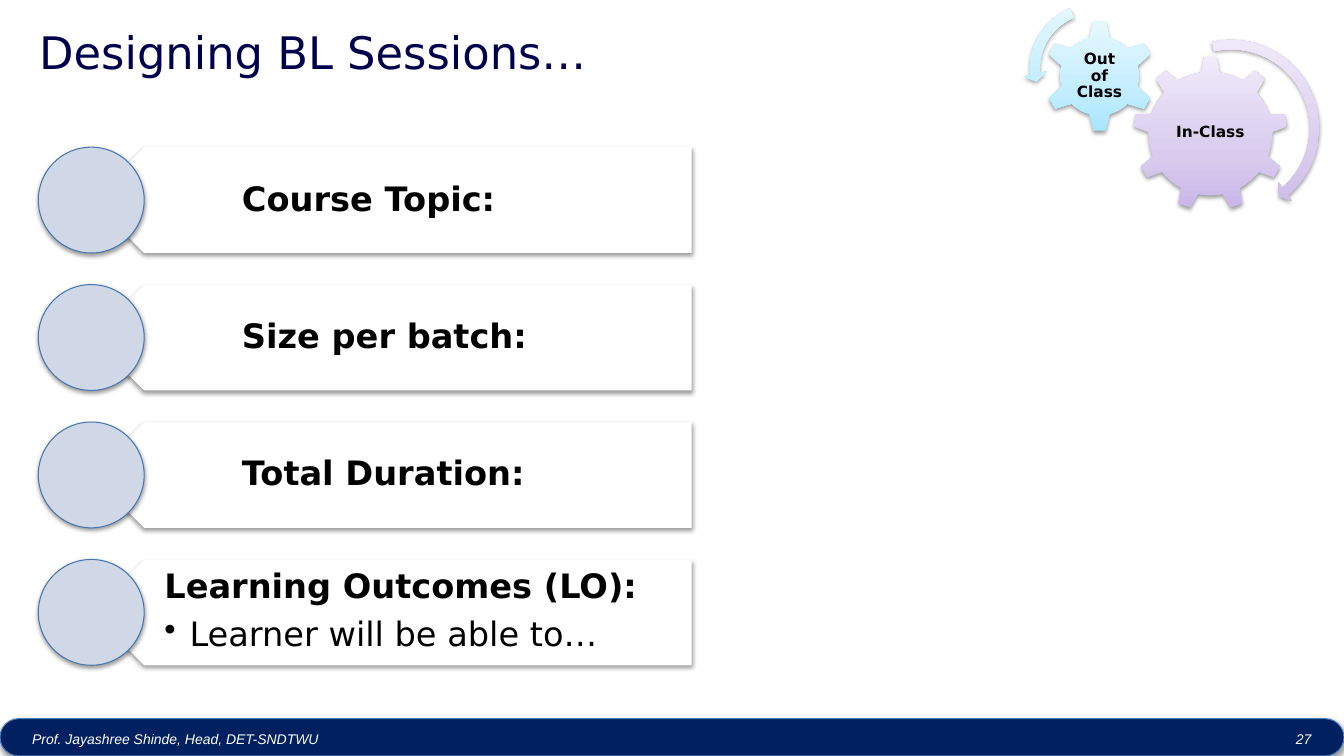
from copy import deepcopy
from dataclasses import dataclass

from lxml import etree
from pptx import Presentation
from pptx.dml.color import RGBColor
from pptx.enum.shapes import MSO_SHAPE
from pptx.enum.text import MSO_ANCHOR, PP_ALIGN
from pptx.oxml.ns import qn
from pptx.util import Inches, Pt

PLATE, DISC, BAR = MSO_SHAPE.PENTAGON, MSO_SHAPE.OVAL, MSO_SHAPE.ROUNDED_RECTANGLE
GEAR6, GEAR9 = MSO_SHAPE.GEAR_6, MSO_SHAPE.GEAR_9
ARC, LEFT_ARC = MSO_SHAPE.CIRCULAR_ARROW, MSO_SHAPE.LEFT_CIRCULAR_ARROW
TOP, MID = MSO_ANCHOR.TOP, MSO_ANCHOR.MIDDLE
LEFT, CENTER = PP_ALIGN.LEFT, PP_ALIGN.CENTER


@dataclass(frozen=True)
class Theme:
    """Colours, fonts and type sizes."""
    font: str = "DejaVu Sans"
    foot_font: str = "Arial"
    ink: str = "000000"
    white: str = "FFFFFF"
    title: str = "00004C"
    navy: str = "002060"
    bar_line: str = "4B7EBC"
    disc: str = "D0D8E8"
    disc_line: str = "4875AC"
    lilac: tuple = ("C9B5E8", "D8CBEE", "F0EAF9")
    sky: tuple = ("A7E6FF", "C1EDFF", "E7F8FF")
    title_size: int = 32
    row_size: int = 24
    gear_size: int = 11
    foot_size: int = 10


T = Theme()


def rgb(tone):
    """Turn a hex string into a colour."""
    return RGBColor.from_string(tone)


def blend(shape, tones):
    """Fill a shape with three tones rising from its foot."""
    shape.fill.gradient()
    shape.fill.gradient_angle = 90
    stops = shape._element.spPr.find(".//" + qn("a:gsLst"))
    stops.insert(1, deepcopy(stops[0]))
    for stop, spot, tone in zip(shape.fill.gradient_stops, (0, 0.35, 1), tones):
        stop.position = spot
        stop.color.rgb = rgb(tone)


def shade(shape):
    """Give a shape a soft shadow below it."""
    shape.shadow.inherit = False
    effects = shape._element.spPr.find(qn("a:effectLst"))
    drop = etree.SubElement(effects, qn("a:outerShdw"), blurRad="40000",
                            dist="20000", dir="5400000", rotWithShape="0")
    tone = etree.SubElement(drop, qn("a:srgbClr"), val=T.ink)
    etree.SubElement(tone, qn("a:alpha"), val="38000")


def add_form(slide, kind, box, fill, line=None, adjust=()):
    """Add a shaded shape with a plain or blended fill."""
    shape = slide.shapes.add_shape(kind, *map(Inches, box))
    for i, value in enumerate(adjust):
        shape.adjustments[i] = value
    if isinstance(fill, tuple):
        blend(shape, fill)
    else:
        shape.fill.solid()
        shape.fill.fore_color.rgb = rgb(fill)
    if line:
        shape.line.color.rgb = rgb(line)
        shape.line.width = Pt(0.75)
    else:
        shape.line.fill.background()
    shade(shape)
    return shape


def add_frame(slide, box, inset=(0.1, 0.05, 0.1, 0.05), anchor=TOP):
    """Add a wrapping text box and return its frame."""
    frame = slide.shapes.add_textbox(*map(Inches, box)).text_frame
    frame.word_wrap = True
    frame.vertical_anchor = anchor
    (frame.margin_left, frame.margin_top,
     frame.margin_right, frame.margin_bottom) = map(Inches, inset)
    return frame


def write(para, text, size, tone=T.ink, font=T.font, bold=False, italic=False,
          align=LEFT):
    """Write one styled run into a paragraph."""
    para.alignment = align
    run = para.add_run()
    run.text = text
    run.font.name, run.font.size = font, Pt(size)
    run.font.bold, run.font.italic = bold, italic
    run.font.color.rgb = rgb(tone)


def space(para, after):
    """Set tight lines and the gap after a paragraph."""
    para.line_spacing = 0.9
    para.space_after = Pt(after)


def indent(para, left, first=0, mark=None):
    """Indent a paragraph, with a bullet if a mark is given."""
    props = para._p.get_or_add_pPr()
    props.set("marL", str(Inches(left)))
    props.set("indent", str(Inches(first)))
    if mark:
        etree.SubElement(props, qn("a:buChar"), char=mark)


def draw_row(slide, box, head, point=None):
    """Draw a disc and plate with a heading and perhaps a bullet."""
    x, y, w, h = box
    plate = add_form(slide, PLATE, (x + h / 2, y, w - h / 2, h), T.white)
    plate.rotation = 180
    frame = add_frame(slide, (x + 0.79, y, w - 0.79, h), (0.46, 0.1, 0.19, 0.1),
                      TOP if point else MID)
    para = frame.paragraphs[0]
    if not point:
        indent(para, 0.77)
    write(para, head, T.row_size, bold=True)
    space(para, 0.35 * T.row_size)
    if point:
        para = frame.add_paragraph()
        para.level = 1
        indent(para, 0.25, -0.25, "•")
        write(para, point, T.row_size)
        space(para, 0.15 * T.row_size)
    add_form(slide, DISC, (x, y, h, h), T.disc, T.disc_line)


def draw_rows(slide, box):
    """Stack the session rows at an equal pitch."""
    x, y, w, h = box
    rows = (("Course Topic:",), ("Size per batch:",), ("Total Duration:",),
            ("Learning Outcomes (LO):", "Learner will be able to…"))
    tall = 1.05
    pitch = (h - tall) / (len(rows) - 1)
    for i, row in enumerate(rows):
        draw_row(slide, (x, y + i * pitch, w, tall), *row)


def draw_gear(slide, kind, box, label, inner, tones):
    """Draw a gear with its label in an inner box."""
    x, y, w, h = box
    dx, dy, iw, ih = inner
    add_form(slide, kind, box, tones)
    frame = add_frame(slide, (x + dx, y + dy, iw, ih), (0.02,) * 4, MID)
    para = frame.paragraphs[0]
    write(para, label, T.gear_size, bold=True, align=CENTER)
    space(para, 0.35 * T.gear_size)


def draw_gears(slide, box):
    """Draw the two gears and their turning arrows."""
    x, y = box[:2]
    draw_gear(slide, GEAR9, (x + 1.09, y + 0.59, 1.53, 1.53), "In-Class",
              (0.31, 0.36, 0.91, 0.79), T.lilac)
    draw_gear(slide, GEAR6, (x + 0.2, y + 0.23, 1.11, 1.11), "Out of Class",
              (0.28, 0.28, 0.55, 0.55), T.sky)
    add_form(slide, ARC, (x + 1.12, y + 0.36, 1.88, 1.88), T.lilac,
             adjust=(0.05, 3.13, 29.8, 154.59, 0.06))
    add_form(slide, LEFT_ARC, (x, y, 1.42, 1.42), T.sky,
             adjust=(0.07, 4.3, 104.89, 148.38, 0.08))


def draw_title(slide, box):
    """Write the slide title."""
    write(add_frame(slide, box).paragraphs[0], "Designing BL Sessions…",
          T.title_size, T.title)


def draw_foot(slide, box):
    """Draw the footer bar with its credit and page number."""
    x, y, w, h = box
    add_form(slide, BAR, box, T.navy, T.bar_line, (0.5,))
    for text, left, wide, align in (
            ("Prof. Jayashree Shinde, Head, DET-SNDTWU", 0.22, 10.51, LEFT),
            ("27", w - 0.69, 0.58, CENTER)):
        frame = add_frame(slide, (x + left, y + 0.07, wide, 0.3))
        write(frame.paragraphs[0], text, T.foot_size, T.white, T.foot_font,
              italic=True, align=align)


def main():
    """Build and save the slide."""
    deck = Presentation()
    deck.slide_width, deck.slide_height = Inches(13.33), Inches(7.5)
    slide = deck.slides.add_slide(deck.slide_layouts[6])
    draw_foot(slide, (0, 7.13, 13.33, 0.37))
    draw_rows(slide, (0.38, 1.46, 6.48, 5.14))
    draw_gears(slide, (10.15, -0.03, 3, 2.24))
    draw_title(slide, (0.29, 0.2, 8.12, 0.64))
    deck.save("out.pptx")


if __name__ == "__main__":
    main()
